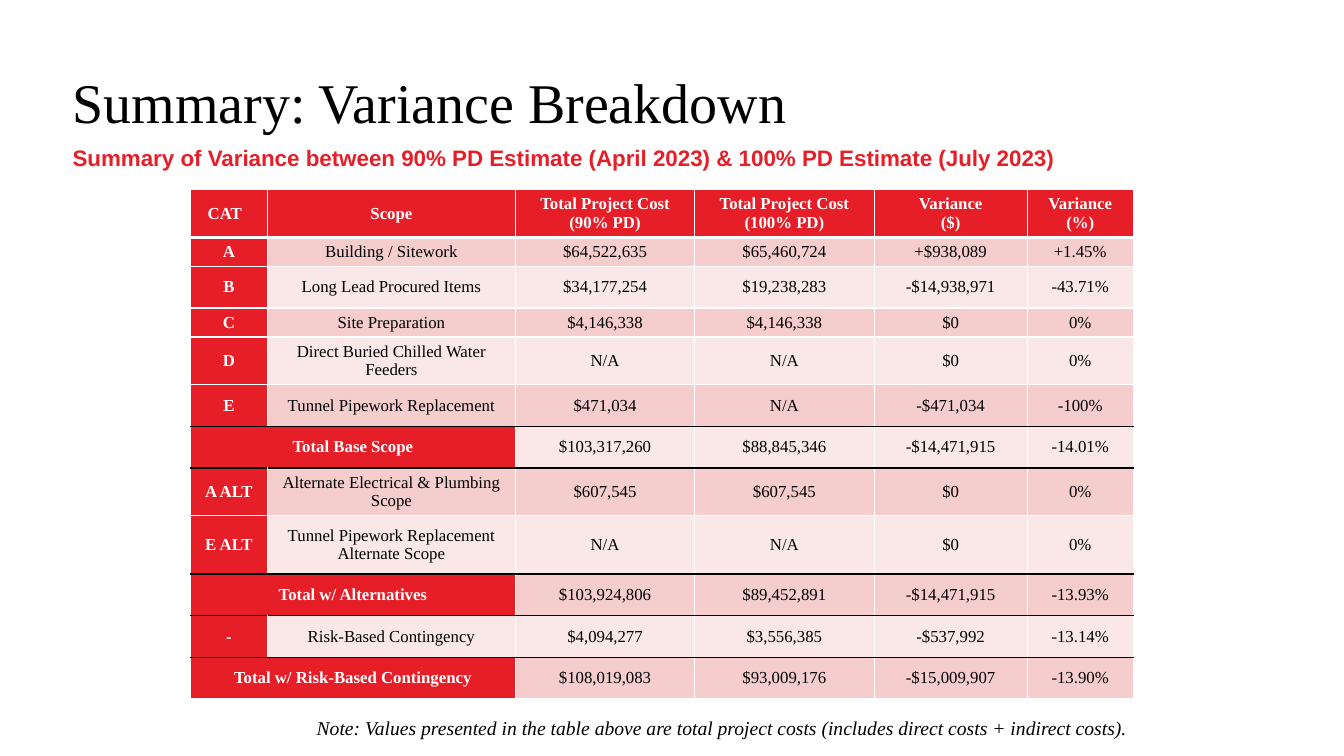
from dataclasses import dataclass

from lxml import etree
from pptx import Presentation
from pptx.dml.color import RGBColor
from pptx.enum.text import MSO_ANCHOR, MSO_AUTO_SIZE, PP_ALIGN
from pptx.oxml.ns import qn
from pptx.util import Cm, Pt

LEFT, CENTER = PP_ALIGN.LEFT, PP_ALIGN.CENTER
TOP, MIDDLE = MSO_ANCHOR.TOP, MSO_ANCHOR.MIDDLE
NO_AUTOFIT = MSO_AUTO_SIZE.NONE


@dataclass(frozen=True)
class Theme:
    serif: str = "Times New Roman"
    sans: str = "Arial"
    red: str = "E61E28"
    dark_band: str = "F5CDCD"
    light_band: str = "FAE8E8"
    black: str = "000000"
    white: str = "FFFFFF"
    title_size: int = 40
    subtitle_size: int = 16
    table_size: int = 12
    note_size: int = 14


THEME = Theme()

HEADER = ["CAT", "Scope", "Total Project Cost (90% PD)", "Total Project Cost (100% PD)",
          "Variance\n($)", "Variance\n(%)"]
# An empty scope marks a total, whose label spans the first two columns
COSTS = [
    ["A", "Building / Sitework", "$64,522,635", "$65,460,724", "+$938,089", "+1.45%"],
    ["B", "Long Lead Procured Items", "$34,177,254", "$19,238,283", "-$14,938,971", "-43.71%"],
    ["C", "Site Preparation", "$4,146,338", "$4,146,338", "$0", "0%"],
    ["D", "Direct Buried Chilled Water Feeders", "N/A", "N/A", "$0", "0%"],
    ["E", "Tunnel Pipework Replacement", "$471,034", "N/A", "-$471,034", "-100%"],
    ["Total Base Scope", "", "$103,317,260", "$88,845,346", "-$14,471,915", "-14.01%"],
    ["A ALT", "Alternate Electrical & Plumbing Scope", "$607,545", "$607,545", "$0", "0%"],
    ["E ALT", "Tunnel Pipework Replacement\nAlternate Scope", "N/A", "N/A", "$0", "0%"],
    ["Total w/ Alternatives", "", "$103,924,806", "$89,452,891", "-$14,471,915", "-13.93%"],
    ["-", "Risk-Based Contingency", "$4,094,277", "$3,556,385", "-$537,992", "-13.14%"],
    ["Total w/ Risk-Based Contingency", "", "$108,019,083", "$93,009,176", "-$15,009,907",
     "-13.90%"],
]
COLUMN_WIDTHS = [1.94, 6.25, 4.52, 4.52, 3.86, 2.67]
ROW_HEIGHTS = [1.18, 0.72, 1.05, 0.72, 1.18, 1.05, 1.05, 1.18, 1.47, 1.05, 1.05, 1.05]


def add_run(paragraph, text, font_name, size, color, bold=False, italic=False):
    run = paragraph.add_run()
    run.text = text
    run.font.name = font_name
    run.font.size = Pt(size)
    run.font.color.rgb = RGBColor.from_string(color)
    run.font.bold = bold
    run.font.italic = italic


def prepare_text(shape, box):
    """Place a text shape in its box and return its first paragraph."""
    shape.left, shape.top, shape.width, shape.height = (Cm(length) for length in box)
    frame = shape.text_frame
    frame.margin_left = frame.margin_top = frame.margin_right = frame.margin_bottom = 0
    frame.word_wrap = True
    frame.auto_size = NO_AUTOFIT
    frame.vertical_anchor = TOP
    paragraph = frame.paragraphs[0]
    paragraph.alignment = LEFT
    paragraph.space_before = Pt(0)
    return paragraph


def add_border(cell, side, color, width):
    line = etree.SubElement(cell._tc.get_or_add_tcPr(), qn(f"a:ln{side}"), w=str(Pt(width)))
    fill = etree.SubElement(line, qn("a:solidFill"))
    etree.SubElement(fill, qn("a:srgbClr"), val=color)


def horizontal_border(rows, boundary):
    """Colour and width of the line above the row with the number given."""
    if boundary == 1:
        return THEME.white, 3
    inner = 0 < boundary < len(rows)
    beside_total = inner and any(not row[1] for row in rows[boundary - 1:boundary + 1])
    return (THEME.black if beside_total else THEME.white), 1


def fill_cell(cell, text, fill, color, bold):
    cell.fill.solid()
    cell.fill.fore_color.rgb = RGBColor.from_string(fill)
    cell.vertical_anchor = MIDDLE
    cell.margin_left = cell.margin_top = cell.margin_right = cell.margin_bottom = Cm(0.13)
    if not text:
        return
    frame = cell.text_frame
    for index, line in enumerate(text.split("\n")):
        paragraph = frame.add_paragraph() if index else frame.paragraphs[0]
        paragraph.alignment = CENTER
        add_run(paragraph, line, THEME.serif, THEME.table_size, color, bold)


def add_heading(slide, box):
    left, top, width, height = box
    # Title
    paragraph = prepare_text(slide.shapes.title, (left, top, width, 1.47))
    paragraph.line_spacing = Pt(44)
    add_run(paragraph, "Summary: Variance Breakdown",
            THEME.serif, THEME.title_size, THEME.black)
    # Subtitle
    paragraph = prepare_text(slide.placeholders[1], (left, top + 1.8, width, height - 1.8))
    add_run(paragraph,
            "Summary of Variance between 90% PD Estimate (April 2023) & 100% PD Estimate (July 2023)",
            THEME.sans, THEME.subtitle_size, THEME.red, bold=True)


def add_variance_table(slide, box):
    rows = [HEADER] + COSTS
    frame = slide.shapes.add_table(len(rows), len(HEADER), *(Cm(length) for length in box))
    table = frame.table
    table.horz_banding = False
    for column, width in zip(table.columns, COLUMN_WIDTHS):
        column.width = Cm(width)
    for row, height in zip(table.rows, ROW_HEIGHTS):
        row.height = Cm(height)

    for row_index, values in enumerate(rows):
        band = THEME.dark_band if row_index % 2 else THEME.light_band
        is_total = not values[1]
        for column_index, text in enumerate(values):
            cell = table.cell(row_index, column_index)
            add_border(cell, "L", THEME.white, 1)
            add_border(cell, "R", THEME.white, 1)
            add_border(cell, "T", *horizontal_border(rows, row_index))
            add_border(cell, "B", *horizontal_border(rows, row_index + 1))
            if row_index == 0 or column_index == 0 or (is_total and column_index == 1):
                fill_cell(cell, text, THEME.red, THEME.white, True)
            else:
                fill_cell(cell, text, band, THEME.black, False)
        if is_total:
            table.cell(row_index, 0).merge(table.cell(row_index, 1))
    # The first heading sits slightly left of centre
    table.cell(0, 0).margin_right = Cm(0.34)


def add_note(slide, box):
    shape = slide.shapes.add_textbox(*(Cm(length) for length in box))
    paragraph = prepare_text(shape, box)
    add_run(paragraph,
            "Note: Values presented in the table above are total project costs "
            "(includes direct costs + indirect costs).",
            THEME.serif, THEME.note_size, THEME.black, italic=True)


def main():
    presentation = Presentation()
    presentation.slide_width = Cm(33.87)
    presentation.slide_height = Cm(19.05)
    slide = presentation.slides.add_slide(presentation.slide_layouts[0])
    add_heading(slide, (1.83, 1.83, 30.15, 2.61))
    add_variance_table(slide, (4.8, 4.78, sum(COLUMN_WIDTHS), sum(ROW_HEIGHTS)))
    add_note(slide, (7.98, 18.03, 22, 0.61))
    presentation.save("out.pptx")


if __name__ == "__main__":
    main()
